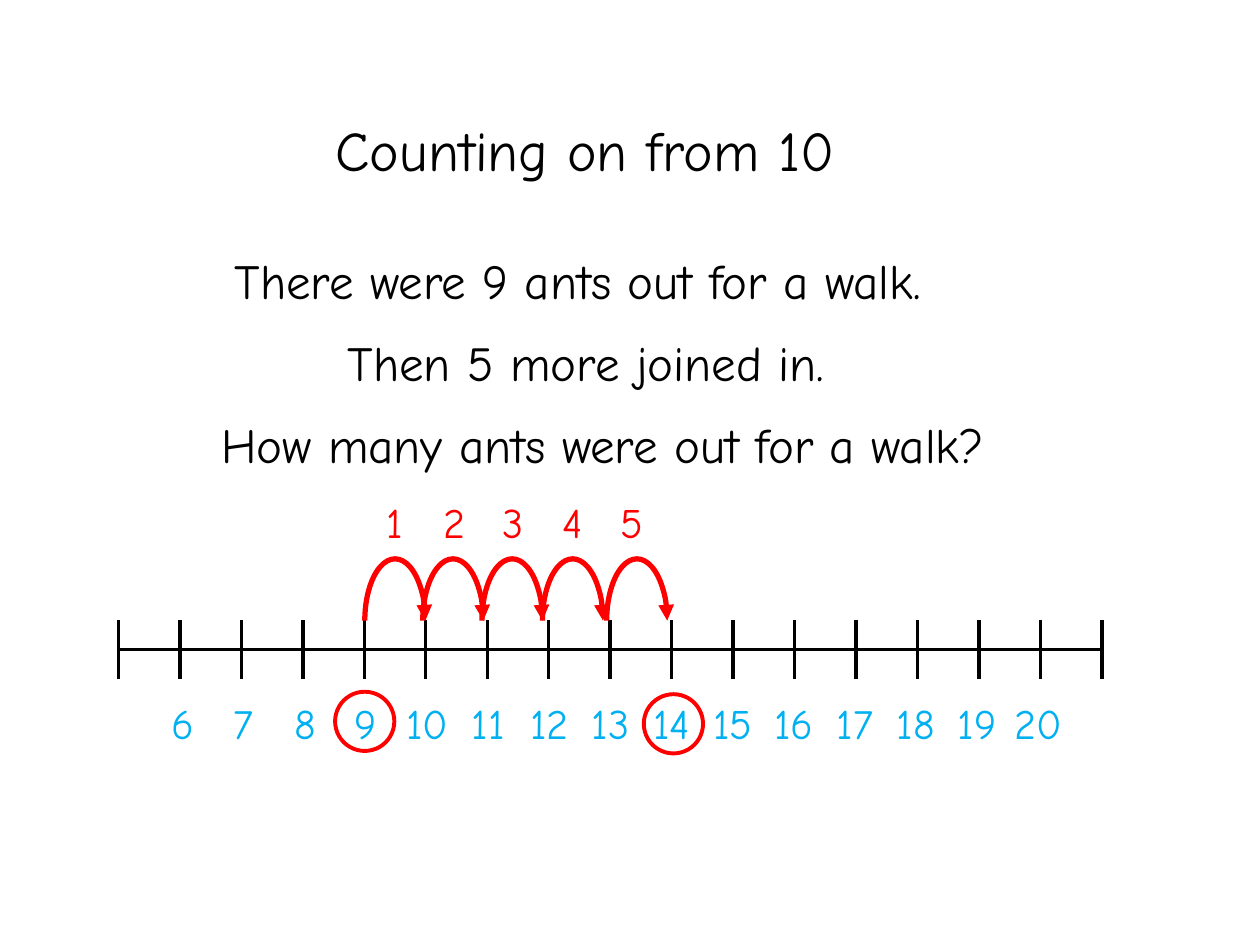
from lxml import etree
from pptx import Presentation
from pptx import util as u
from pptx.dml.color import RGBColor
from pptx.enum import shapes, text
from pptx.oxml.ns import qn

BLACK, RED, BLUE = "000000", "FF0000", "00B0F0"


def colour(value):
    return RGBColor.from_string(value)


class NumberLineSlide:
    """Holds the lettering style and draws on one slide."""

    font_name = "Comic Neue"

    def __init__(self, slide):
        self.slide = slide

    def label(self, words, left, top, width, height, size, hue):
        box = self.slide.shapes.add_textbox(*map(u.Inches, (left, top, width, height)))
        box.text_frame.word_wrap = True
        paragraph = box.text_frame.paragraphs[0]
        paragraph.text = words
        paragraph.alignment = text.PP_ALIGN.CENTER
        paragraph.font.name = self.font_name
        paragraph.font.size = u.Pt(size)
        paragraph.font.color.rgb = colour(hue)

    def outline(self, kind, left, top, width, height, weight):
        shape = self.slide.shapes.add_shape(
            kind, *map(u.Inches, (left, top, width, height)))
        shape.shadow.inherit = False
        shape.fill.background()
        shape.line.color.rgb = colour(RED)
        shape.line.width = u.Pt(weight)
        return shape

    def ring(self, left, top):
        self.outline(shapes.MSO_SHAPE.OVAL, left, top, 0.47, 0.47, 2.25)

    def hop(self, left, top):
        arc = self.outline(shapes.MSO_SHAPE.LEFT_BRACKET, left, top, 0.49, 0.48, 3)
        arc.rotation = 90
        arc.adjustments[0] = 0.74
        line = arc.line._get_or_add_ln()
        etree.SubElement(line, qn("a:tailEnd"), type="triangle")

    def border(self, cell, side, visible):
        properties = cell._tc.get_or_add_tcPr()
        line = etree.SubElement(properties, qn(f"a:ln{side}"), w=str(u.Pt(2.25)))
        if visible:
            fill = etree.SubElement(line, qn("a:solidFill"))
            etree.SubElement(fill, qn("a:srgbClr"), val=BLACK)
        else:
            etree.SubElement(line, qn("a:noFill"))

    def number_line(self, left, top, width, height, steps):
        table = self.slide.shapes.add_table(
            2, steps, *map(u.Inches, (left, top, width, height))).table
        table.first_row = table.horz_banding = False
        for row in range(2):
            for column in range(steps):
                cell = table.cell(row, column)
                cell.margin_left = cell.margin_right = 0
                cell.margin_top = cell.margin_bottom = 0
                # Only the line between the rows and the ticks show
                for side in "LRTB":
                    hidden = side == "TB"[row]
                    self.border(cell, side, not hidden)
                cell.fill.background()
                # Small empty text keeps the rows low
                paragraph = cell.text_frame.paragraphs[0]
                etree.SubElement(paragraph._p, qn("a:endParaRPr"), sz="800")


def main():
    presentation = Presentation()
    presentation.slide_width = u.Inches(10)
    presentation.slide_height = u.Inches(7.5)
    page = NumberLineSlide(
        presentation.slides.add_slide(presentation.slide_layouts[6]))

    # Title and word problem
    page.label("Counting on from 10", 1.27, 0.87, 6.75, 0.64, 32, BLACK)
    problem = [
        ("There were 9 ants out for a walk. ", 0.8),
        (" Then 5 more joined in. ", 0.8),
        (" How many ants were out for a walk?", 0.87),
    ]
    for index, (sentence, left) in enumerate(problem):
        page.label(sentence, left, 1.94 + 0.65 * index, 7.7, 0.57, 28, BLACK)

    # Number line from 6 to 20
    page.number_line(0.94, 4.92, 7.81, 0.47, 16)
    for index in range(15):
        page.label(str(6 + index), 1.09 + 0.485 * index, 5.49, 0.72, 0.5, 24, BLUE)

    # Five counted hops
    for index, left in enumerate((2.89, 3.35, 3.82, 4.3, 4.81)):
        page.hop(left, 4.44)
        page.label(str(index + 1), 2.84 + 0.47 * index, 3.89, 0.59, 0.5, 24, RED)

    # Rings around the start and the answer
    page.ring(2.66, 5.49)
    page.ring(5.11, 5.51)

    presentation.save("out.pptx")


if __name__ == "__main__":
    main()
